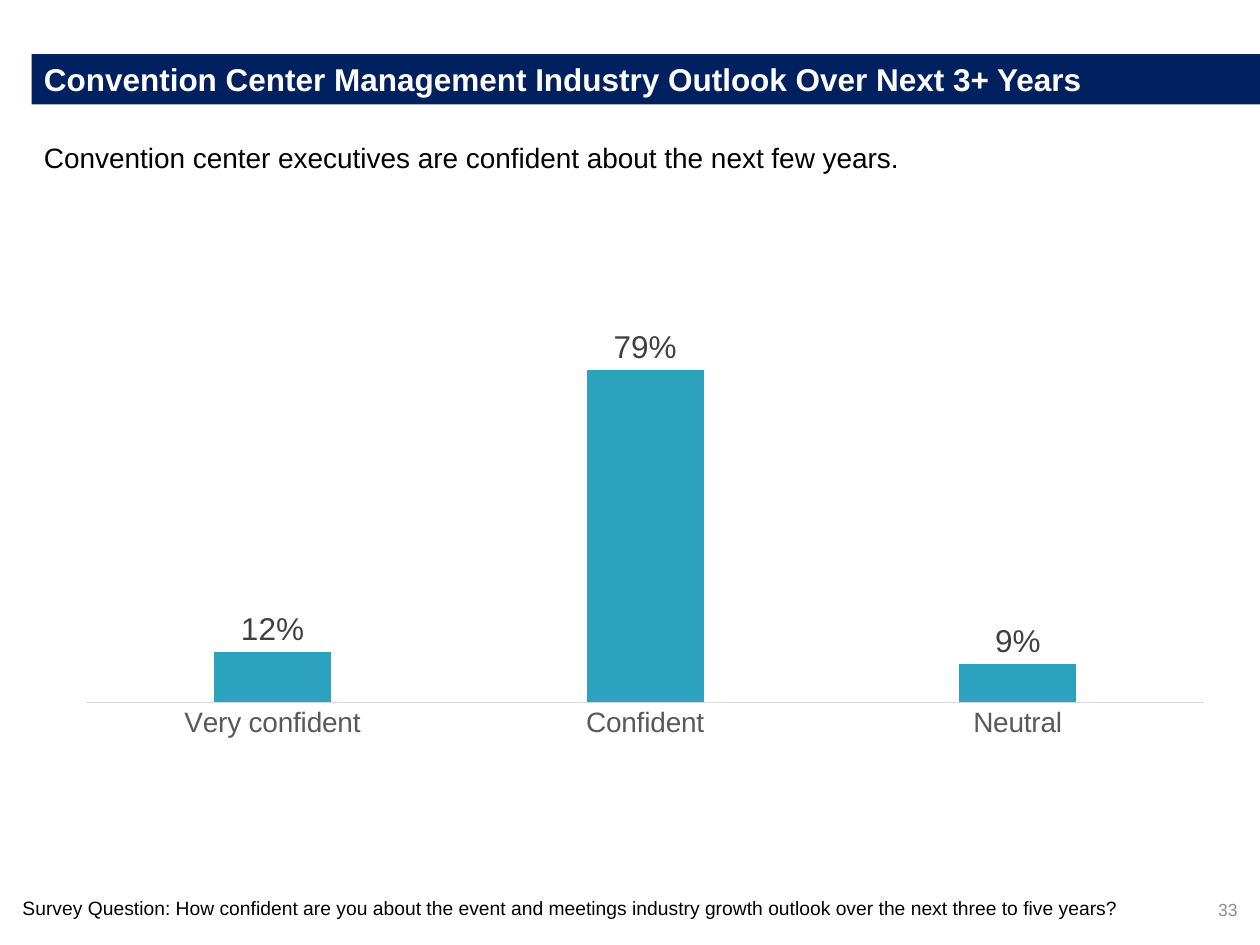
from dataclasses import dataclass

from lxml import etree
from pptx import Presentation
from pptx.chart.data import CategoryChartData
from pptx.dml.color import RGBColor
from pptx.enum.chart import XL_CHART_TYPE, XL_LABEL_POSITION, XL_TICK_MARK
from pptx.enum.text import MSO_ANCHOR, PP_ALIGN
from pptx.oxml import parse_xml
from pptx.oxml.ns import nsdecls, qn
from pptx.util import Inches, Pt

COLUMN = XL_CHART_TYPE.COLUMN_CLUSTERED
OUTSIDE_END = XL_LABEL_POSITION.OUTSIDE_END
NO_TICK = XL_TICK_MARK.NONE
TOP, MIDDLE = MSO_ANCHOR.TOP, MSO_ANCHOR.MIDDLE
LEFT, RIGHT = PP_ALIGN.LEFT, PP_ALIGN.RIGHT
FONT = "Arial"


@dataclass
class Label:
    text: str
    left: float
    top: float
    width: float
    height: float
    size: float
    color: str = "000000"
    bold: bool = False
    fill: str = ""
    anchor: MSO_ANCHOR = TOP
    align: PP_ALIGN = LEFT
    spacing: float = 1.0


LABELS = [
    Label("33", 8.17, 7.07, 1.75, 0.3, 10, "8C8C8C", anchor=MIDDLE, align=RIGHT),
    Label("Convention Center Management Industry Outlook Over Next 3+ Years",
          0.25, 0.43, 9.75, 0.4, 18, "FFFFFF", bold=True, fill="002060", anchor=MIDDLE),
    Label("Convention center executives are confident about the next few years.",
          0.25, 1.07, 9.42, 0.37, 16),
    Label("Survey Question: How confident are you about the event and meetings industry "
          "growth outlook over the next three to five years?",
          0.08, 7.05, 9.92, 0.28, 11, spacing=1.07),
]
OUTLOOK = {"Very confident": 0.12, "Confident": 0.79, "Neutral": 0.09}
PLOT = {"x": 0.006, "y": 0.035, "w": 0.975, "h": 0.801}


def rgb(color: str) -> RGBColor:
    """Return the colour for a hex string."""
    return RGBColor.from_string(color)


def style_font(font, size: float, color: str, bold: bool = False) -> None:
    """Set the face, size, colour and weight of a font."""
    font.name, font.size, font.bold = FONT, Pt(size), bold
    font.color.rgb = rgb(color)


def add_label(s, label: Label) -> None:
    """Add a text box, filled if the label has a fill."""
    sp = s.shapes.add_textbox(Inches(label.left), Inches(label.top),
                              Inches(label.width), Inches(label.height))
    if label.fill:
        sp.fill.solid()
        sp.fill.fore_color.rgb = rgb(label.fill)
    tf = sp.text_frame
    tf.text = label.text
    tf.word_wrap = True
    tf.vertical_anchor = label.anchor
    p = tf.paragraphs[0]
    p.alignment, p.line_spacing = label.align, label.spacing
    style_font(p.runs[0].font, label.size, label.color, label.bold)


def set_plot_layout(chart) -> None:
    """Fix the inner plot area as fractions of the chart."""
    area = chart.plots[0]._element.getparent()
    for old in area.findall(qn("c:layout")):
        area.remove(old)
    layout = parse_xml(f"<c:layout {nsdecls('c')}><c:manualLayout/></c:layout>")
    modes = {"layoutTarget": "inner", "xMode": "edge", "yMode": "edge"}
    for tag, value in {**modes, **PLOT}.items():
        etree.SubElement(layout[0], qn(f"c:{tag}")).set("val", str(value))
    area.insert(0, layout)


def add_outlook_chart(s) -> None:
    """Add the column chart of confidence levels."""
    data = CategoryChartData(number_format="0%")
    data.categories = list(OUTLOOK)
    data.add_series("Series 1", list(OUTLOOK.values()))
    chart = s.shapes.add_chart(COLUMN, Inches(0.63), Inches(2.44),
                               Inches(9.1), Inches(3.75), data).chart
    chart.has_legend = chart.has_title = False
    style_font(chart.font, 10, "000000")
    set_plot_layout(chart)

    plot = chart.plots[0]
    plot.gap_width, plot.overlap, plot.vary_by_categories = 219, -27, False
    fill = plot.series[0].format.fill
    fill.solid()
    fill.fore_color.rgb = rgb("2DA2BF")
    labels = plot.series[0].data_labels
    labels.show_value = True
    labels.number_format, labels.number_format_is_linked = "0%", False
    labels.position = OUTSIDE_END
    style_font(labels.font, 18, "404040")

    axis = chart.category_axis
    axis.major_tick_mark = axis.minor_tick_mark = NO_TICK
    axis.format.line.color.rgb = rgb("D9D9D9")
    axis.format.line.width = Pt(0.75)
    style_font(axis.tick_labels.font, 16, "595959")
    axis = chart.value_axis
    axis.visible = axis.has_major_gridlines = False
    axis.minimum_scale, axis.maximum_scale = 0, 0.9


def main() -> None:
    """Build and save the slide."""
    prs = Presentation()
    prs.slide_width, prs.slide_height = Inches(10), Inches(7.5)
    s = prs.slides.add_slide(prs.slide_layouts[6])
    add_outlook_chart(s)
    for label in LABELS:
        add_label(s, label)
    prs.save("out.pptx")


if __name__ == "__main__":
    main()
